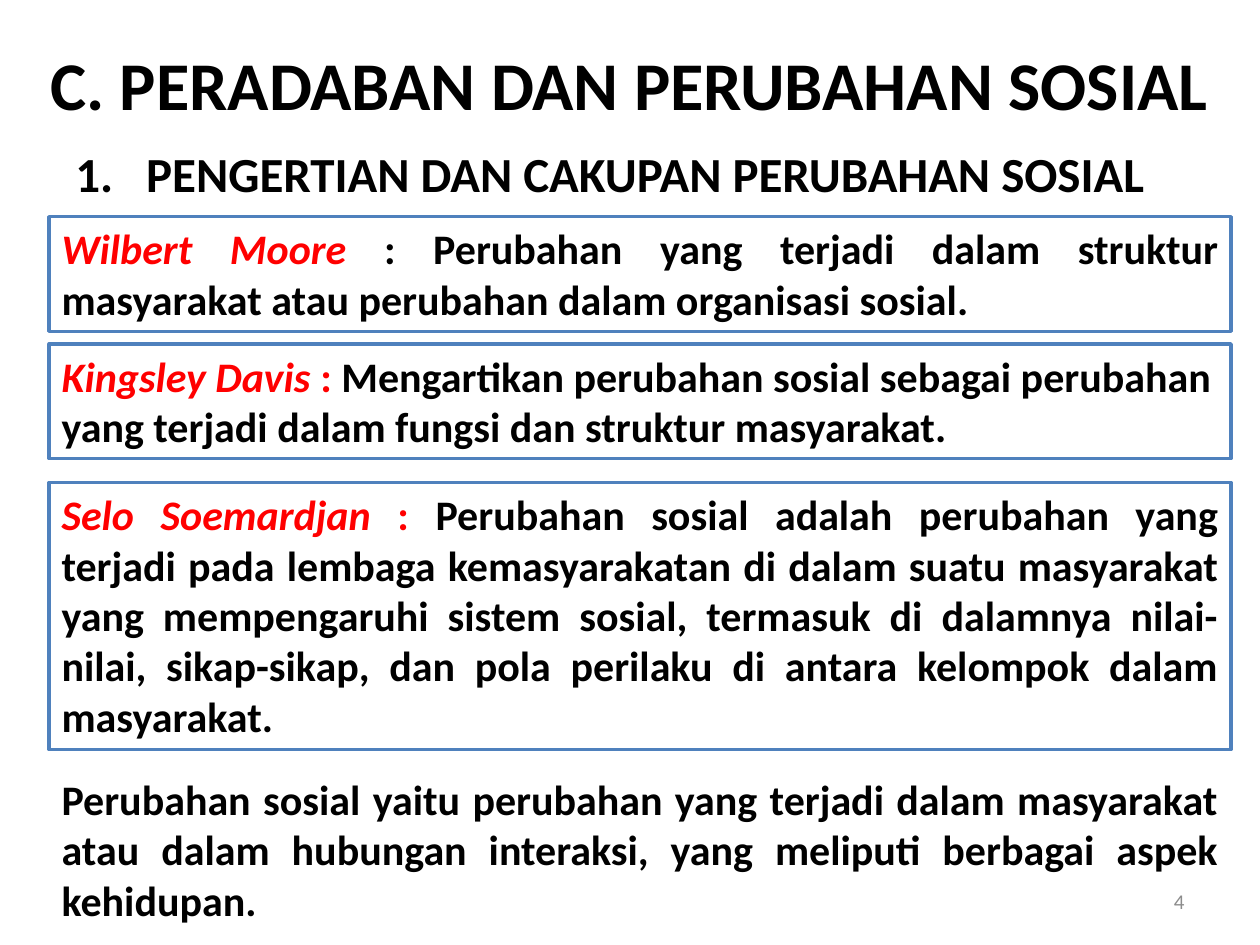
from dataclasses import dataclass

from lxml import etree
from pptx import Presentation
from pptx import util as u
from pptx.dml.color import RGBColor
from pptx.enum import shapes, text
from pptx.oxml.ns import qn

BLACK = RGBColor(0, 0, 0)
WHITE = RGBColor(255, 255, 255)
RED = RGBColor(255, 0, 0)
BLUE = RGBColor(0x4F, 0x81, 0xBD)
GRAY = RGBColor(0x8C, 0x8C, 0x8C)

LEFT, JUSTIFY = text.PP_ALIGN.LEFT, text.PP_ALIGN.JUSTIFY
CENTER, RIGHT = text.PP_ALIGN.CENTER, text.PP_ALIGN.RIGHT
TOP, MIDDLE = text.MSO_ANCHOR.TOP, text.MSO_ANCHOR.MIDDLE
COLUMN_LEFT, COLUMN_WIDTH = 28.08, 675.36
NUMBER_INDENT = 40.5


@dataclass(frozen=True)
class Run:
    words: str
    size: float = 24
    color: RGBColor = BLACK
    bold: bool = True
    italic: bool = False


@dataclass(frozen=True)
class Block:
    runs: tuple[Run, ...]
    top: float
    height: float
    left: float = COLUMN_LEFT
    width: float = COLUMN_WIDTH
    align: text.PP_ALIGN = JUSTIFY
    anchor: text.MSO_ANCHOR = TOP
    framed: bool = False
    numbered: bool = False


def definition(author: str, colon: Run, meaning: str, top: float, height: float,
               align: text.PP_ALIGN = JUSTIFY) -> Block:
    runs = (Run(f"{author} ", color=RED, italic=True), colon, Run(meaning))
    return Block(runs, top, height, align=align, framed=True)


def number_paragraph(paragraph) -> None:
    properties = paragraph._p.get_or_add_pPr()
    indent = u.Pt(NUMBER_INDENT)
    properties.set("marL", str(indent))
    properties.set("indent", str(-indent))
    etree.SubElement(properties, qn("a:buFont"), typeface="+mj-lt")
    etree.SubElement(properties, qn("a:buAutoNum"), type="arabicPeriod")


def draw_block(slide, block: Block) -> None:
    place = [u.Pt(v) for v in (block.left, block.top, block.width, block.height)]
    if block.framed:
        box = slide.shapes.add_shape(shapes.MSO_SHAPE.RECTANGLE, *place)
        box.shadow.inherit = False
        box.fill.solid()
        box.fill.fore_color.rgb = WHITE
        box.line.color.rgb = BLUE
        box.line.width = u.Pt(2)
    else:
        box = slide.shapes.add_textbox(*place)
    frame = box.text_frame
    frame.word_wrap = True
    frame.vertical_anchor = block.anchor
    paragraph = frame.paragraphs[0]
    paragraph.alignment = block.align
    if block.numbered:
        number_paragraph(paragraph)
    for part in block.runs:
        run = paragraph.add_run()
        run.text = part.words
        run.font.color.rgb = part.color
        style = {"name": "Calibri", "size": u.Pt(part.size),
                 "bold": part.bold, "italic": part.italic}
        for attribute, value in style.items():
            setattr(run.font, attribute, value)


RED_COLON = Run(": ", color=RED)

BLOCKS = (
    Block((Run("C. PERADABAN DAN PERUBAHAN SOSIAL", size=39),),
          16.56, 61.92, left=16.56, width=686.16, align=CENTER, anchor=MIDDLE),
    Block((Run("PENGERTIAN DAN CAKUPAN PERUBAHAN SOSIAL", size=28),),
          78.48, 45.36, left=36, width=648, align=LEFT, numbered=True),
    Block((Run("Perubahan sosial yaitu perubahan yang terjadi dalam masyarakat atau dalam "
               "hubungan interaksi, yang meliputi berbagai aspek kehidupan."),),
          438.48, 94.32),
    definition("Wilbert Moore", Run(": "),
               "Perubahan yang terjadi dalam struktur masyarakat atau perubahan dalam "
               "organisasi sosial.", 123.84, 65.52),
    definition("Kingsley Davis", RED_COLON,
               "Mengartikan perubahan sosial sebagai perubahan yang terjadi dalam fungsi "
               "dan struktur masyarakat.", 196.56, 65.52, align=LEFT),
    definition("Selo Soemardjan", RED_COLON,
               "Perubahan sosial adalah perubahan yang terjadi pada lembaga kemasyarakatan "
               "di dalam suatu masyarakat yang mempengaruhi sistem sosial, termasuk di "
               "dalamnya nilai-nilai, sikap-sikap, dan pola perilaku di antara kelompok "
               "dalam masyarakat.", 275.76, 152.64),
    Block((Run("4", size=12, color=GRAY, bold=False),),
          500.4, 28.8, left=516.24, width=167.76, align=RIGHT, anchor=MIDDLE),
)


def main() -> None:
    deck = Presentation()
    deck.slide_width, deck.slide_height = u.Pt(720), u.Pt(540)
    slide = deck.slides.add_slide(deck.slide_layouts[6])
    for block in BLOCKS:
        draw_block(slide, block)
    deck.save("out.pptx")


if __name__ == "__main__":
    main()
